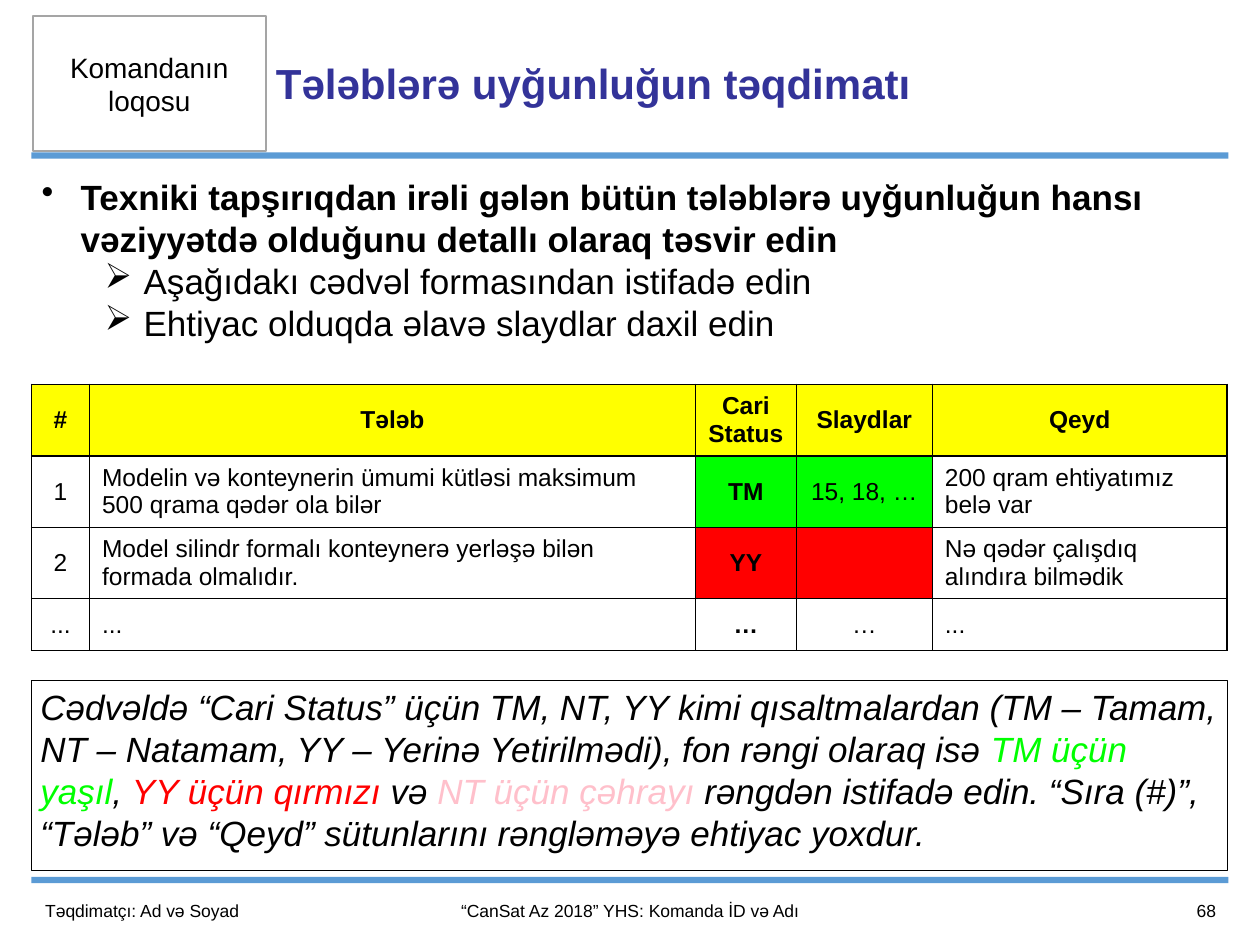
import pptx
import pptx.util
import pptx.dml.color
import pptx.enum.shapes
import pptx.enum.text
import pptx.oxml
import pptx.oxml.ns
from dataclasses import dataclass
from lxml import etree

Inches, Pt = pptx.util.Inches, pptx.util.Pt
RGB = pptx.dml.color.RGBColor.from_string
ALIGN = pptx.enum.text.PP_ALIGN
MIDDLE = pptx.enum.text.MSO_ANCHOR.MIDDLE
TOP = pptx.enum.text.MSO_ANCHOR.TOP
RECTANGLE = pptx.enum.shapes.MSO_SHAPE.RECTANGLE


@dataclass(frozen=True)
class Theme:
    face: str = "Arial"
    black: str = "000000"
    white: str = "FFFFFF"
    rule: str = "5B9BD5"
    frame: str = "A5A5A5"
    heading: str = "333399"
    header: str = "FFFF00"
    done: str = "00FF00"
    missing: str = "FF0000"
    partial: str = "FFC0CB"
    title_size: int = 24
    body_size: int = 20
    logo_size: int = 16
    table_size: int = 14
    footer_size: int = 10


theme = Theme()


def style(paragraph, size, color=theme.black, bold=False, italic=False, align=ALIGN.LEFT):
    paragraph.alignment = align
    for run in paragraph.runs:
        run.font.name = theme.face
        run.font.size = Pt(size)
        run.font.bold = bold
        run.font.italic = italic
        run.font.color.rgb = RGB(color)


def add_box(box, fill=None, line=None, line_width=1, anchor=MIDDLE, tight=False):
    place = [Inches(length) for length in box]
    if fill:
        shape = slide.shapes.add_shape(RECTANGLE, *place)
        shape.shadow.inherit = False
        shape.fill.solid()
        shape.fill.fore_color.rgb = RGB(fill)
        if line:
            shape.line.color.rgb = RGB(line)
            shape.line.width = Pt(line_width)
        else:
            shape.line.fill.background()
    else:
        shape = slide.shapes.add_textbox(*place)
    frame = shape.text_frame
    frame.word_wrap = True
    frame.vertical_anchor = anchor
    if tight:
        frame.margin_left = frame.margin_right = Inches(0.07)
        frame.margin_top = frame.margin_bottom = Inches(0.04)
    return frame


deck = pptx.Presentation()
deck.slide_width, deck.slide_height = Inches(10), Inches(7.5)
slide = deck.slides.add_slide(deck.slide_layouts[6])

for rule_top in (1.21, 6.96):
    add_box((0.25, rule_top, 9.5, 0.05), fill=theme.rule)

team_logo = add_box((0.26, 0.13, 1.85, 1.07), fill=theme.white, line=theme.frame)
team_logo.text = "Komandanın loqosu"
style(team_logo.paragraphs[0], theme.logo_size, align=ALIGN.CENTER)
team_logo.paragraphs[0].line_spacing = Pt(theme.logo_size * 1.2)

title = add_box((2.12, 0.13, 6, 1.06), tight=True)
title.text = "Tələblərə uyğunluğun təqdimatı"
style(title.paragraphs[0], theme.title_size, theme.heading, bold=True)

instructions = [
    ("•", 0, 0.31, "Texniki tapşırıqdan irəli gələn bütün tələblərə uyğunluğun hansı vəziyyətdə olduğunu detallı olaraq təsvir edin"),
    ("➢", 1, 0.81, "Aşağıdakı cədvəl formasından istifadə edin"),
    ("➢", 1, 0.81, "Ehtiyac olduqda əlavə slaydlar daxil edin"),
]
guidance = add_box((0.26, 1.35, 9.49, 1.5), anchor=TOP, tight=True)
guidance.text = "\n".join(wording for *_, wording in instructions)
for paragraph, (mark, level, indent, _) in zip(guidance.paragraphs, instructions):
    paragraph.level = level
    paragraph.line_spacing = Pt(theme.body_size * 1.2)
    properties = paragraph._p.get_or_add_pPr()
    properties.set("marL", str(Inches(indent)))
    properties.set("indent", str(Inches(-0.31)))
    bullet = etree.SubElement(properties, pptx.oxml.ns.qn("a:buChar"))
    bullet.set("char", mark)
    style(paragraph, theme.body_size, bold=level == 0)

footers = [
    ((8.75, 7.03, 1, 0.4), "68", ALIGN.RIGHT),
    ((0.26, 7.03, 2.39, 0.4), "Təqdimatçı: Ad və Soyad", ALIGN.LEFT),
    ((2.65, 7.03, 4.7, 0.4), "“CanSat Az 2018” YHS: Komanda İD və Adı", ALIGN.CENTER),
]
for box, wording, align in footers:
    footer = add_box(box)
    footer.text = wording
    style(footer.paragraphs[0], theme.footer_size, align=align)

requirements = [
    ("#", "Tələb", "Cari Status", "Slaydlar", "Qeyd"),
    ("1", "Modelin və konteynerin ümumi kütləsi maksimum 500 qrama qədər ola bilər", "TM", "15, 18, …", "200 qram ehtiyatımız belə var"),
    ("2", "Model silindr formalı konteynerə yerləşə bilən formada olmalıdır.", "YY", "", "Nə qədər çalışdıq alındıra bilmədik"),
    ("...", "...", "…", "…", "..."),
]
column_widths = (0.46, 4.81, 0.8, 1.08, 2.34)
row_heights = (0.54, 0.54, 0.54, 0.41)
status_fills = {"TM": theme.done, "YY": theme.missing}
status_column, slides_column = 2, 3
prose_columns = (1, 4)

compliance = slide.shapes.add_table(
    len(requirements), len(column_widths), Inches(0.25), Inches(3.05),
    Inches(sum(column_widths)), Inches(sum(row_heights))).table
compliance.first_row = compliance.horz_banding = False
for column, width in zip(compliance.columns, column_widths):
    column.width = Inches(width)
for row, height in zip(compliance.rows, row_heights):
    row.height = Inches(height)

for r, record in enumerate(requirements):
    for c, wording in enumerate(record):
        cell = compliance.cell(r, c)
        cell.text = wording
        cell.vertical_anchor = MIDDLE
        style(cell.text_frame.paragraphs[0], theme.table_size,
              bold=r == 0 or c == status_column,
              align=ALIGN.LEFT if r and c in prose_columns else ALIGN.CENTER)
        fill = theme.header if r == 0 else None
        if c in (status_column, slides_column):
            fill = status_fills.get(record[status_column], fill)
        cell_properties = cell._tc.get_or_add_tcPr()
        for side in ("lnL", "lnR", "lnT", "lnB"):
            cell_properties.append(pptx.oxml.parse_xml(
                f'<a:{side} {pptx.oxml.ns.nsdecls("a")} w="{Pt(1)}"><a:solidFill>'
                f'<a:srgbClr val="{theme.black}"/></a:solidFill></a:{side}>'))
        if fill:
            cell.fill.solid()
            cell.fill.fore_color.rgb = RGB(fill)
        else:
            cell.fill.background()

legend_parts = [
    ("Cədvəldə “Cari Status” üçün TM, NT, YY kimi qısaltmalardan (TM – Tamam, NT – Natamam, YY – Yerinə Yetirilmədi), fon rəngi olaraq isə ", theme.black),
    ("TM üçün yaşıl", theme.done),
    (", ", theme.black),
    ("YY üçün qırmızı ", theme.missing),
    ("və ", theme.black),
    ("NT üçün çəhrayı ", theme.partial),
    ("rəngdən istifadə edin. “Sıra (#)”, “Tələb” və “Qeyd” sütunlarını rəngləməyə ehtiyac yoxdur.", theme.black),
]
legend = add_box((0.25, 5.4, 9.49, 1.51), fill=theme.white, line=theme.black,
                 line_width=0.25, anchor=TOP, tight=True).paragraphs[0]
for wording, _ in legend_parts:
    legend.add_run().text = wording
style(legend, theme.body_size, italic=True)
legend.line_spacing = Pt(theme.body_size * 1.2)
for run, (_, color) in zip(legend.runs, legend_parts):
    run.font.color.rgb = RGB(color)

deck.save("out.pptx")
